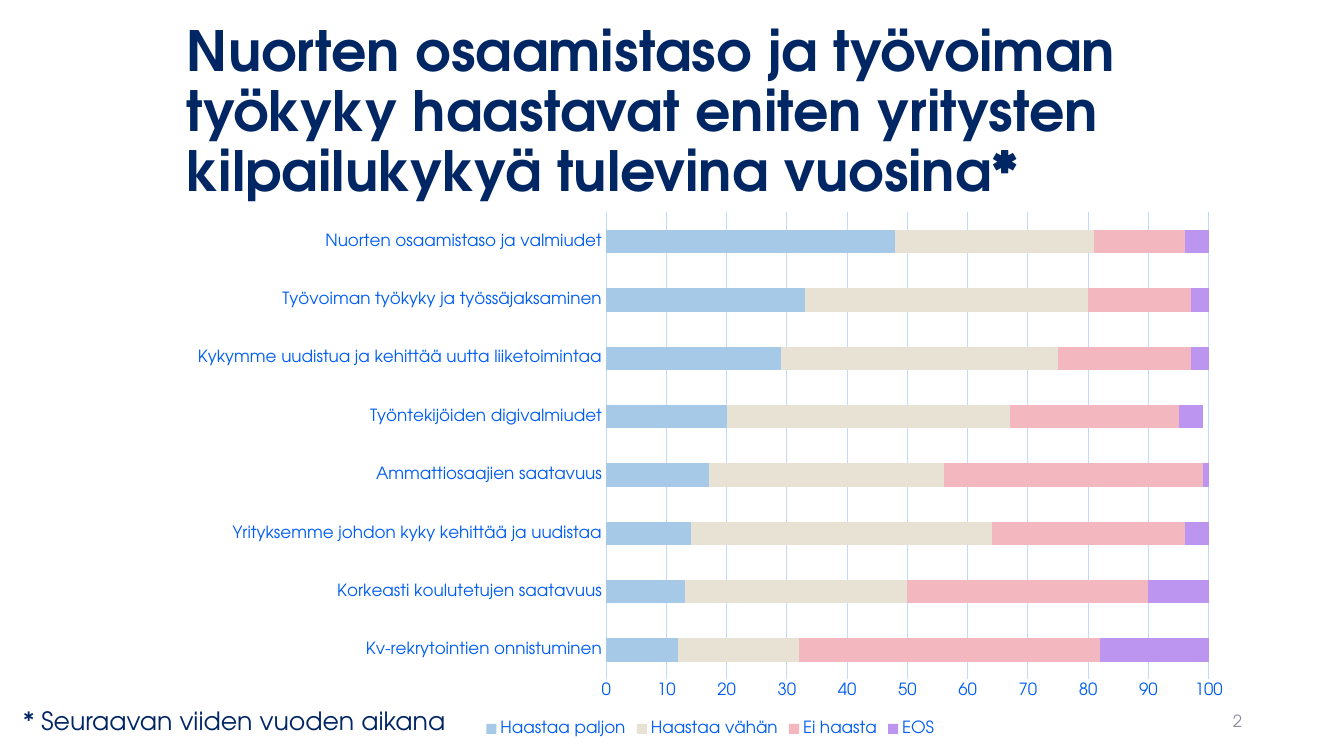
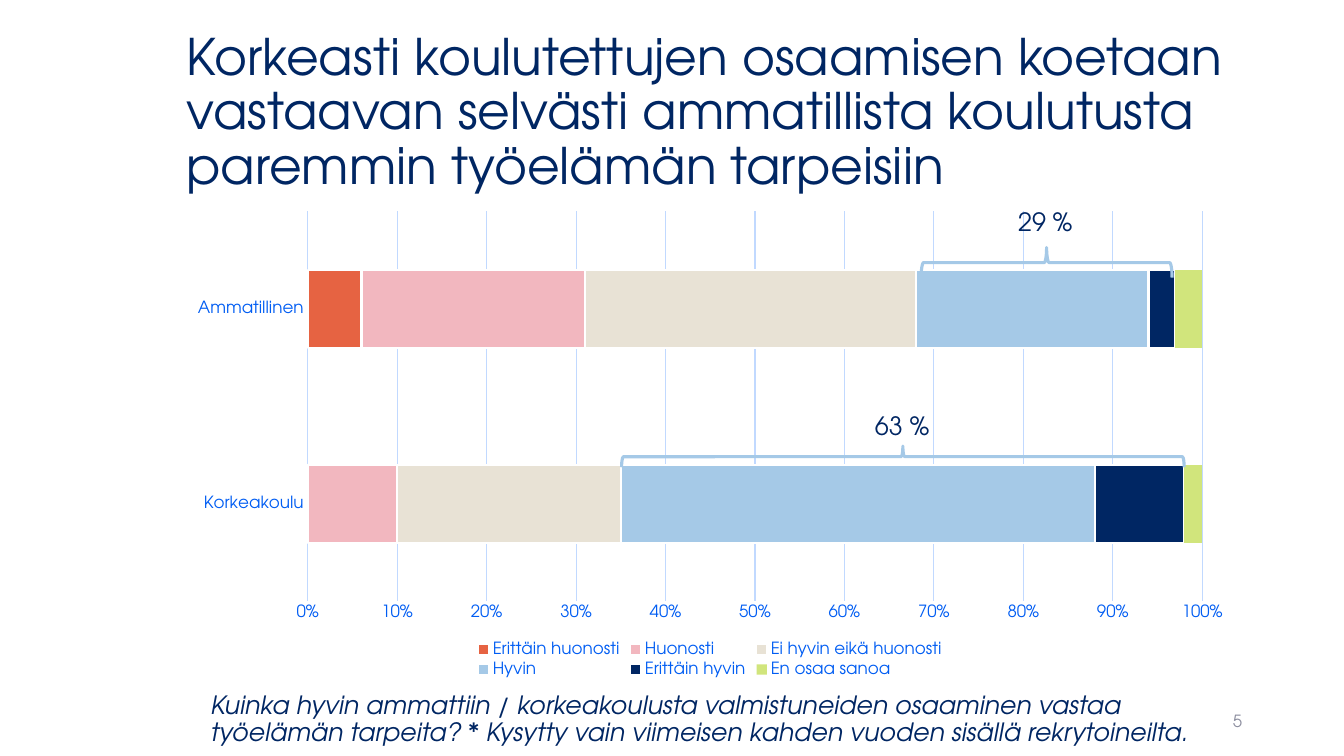
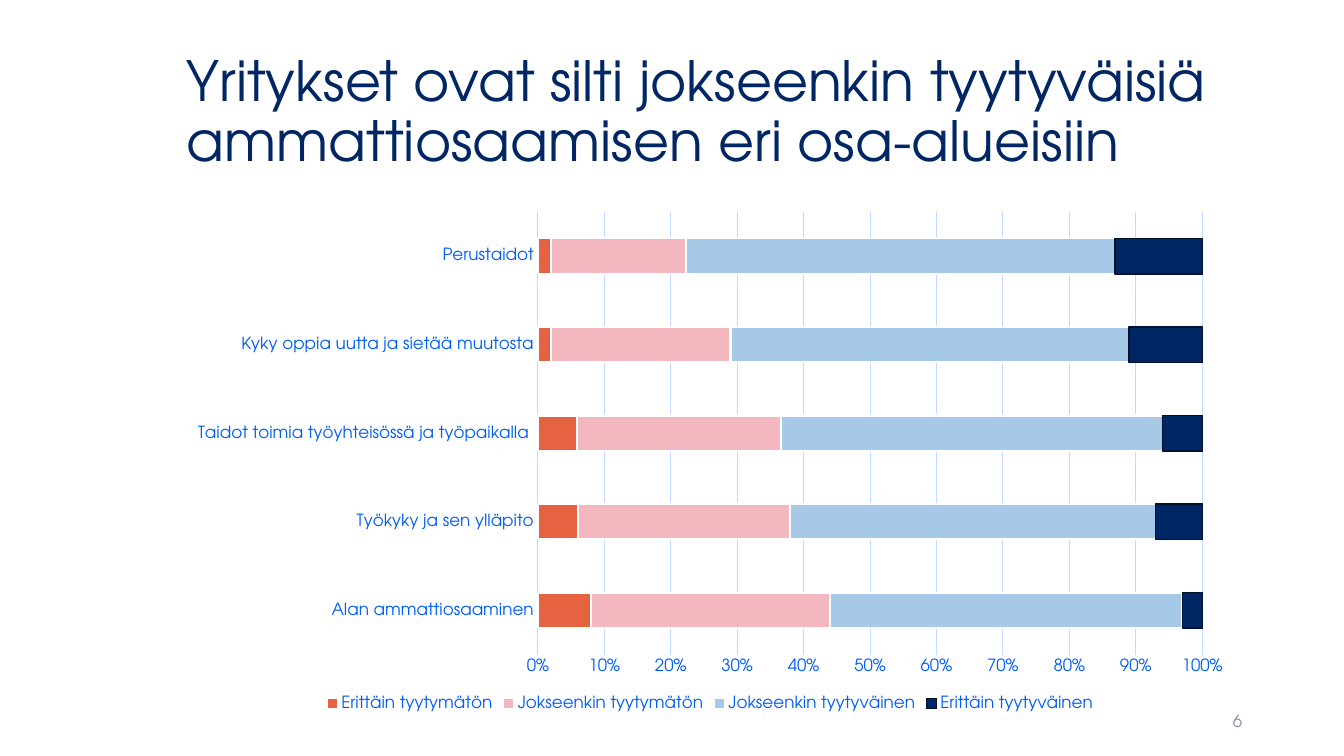
from pptx import Presentation
from pptx import util as u
from pptx.chart import data as cd
from pptx.dml.color import RGBColor
from pptx.enum import chart as ec, shapes, text

FONT = "TeX Gyre Adventor"
NAVY = RGBColor(0x00, 0x26, 0x63)
BLUE = RGBColor(0x00, 0x5D, 0xF3)
PALE = RGBColor(0xC1, 0xD9, 0xFF)
GREY = RGBColor(0x8C, 0x8E, 0x9F)
WHITE = RGBColor(0xFF, 0xFF, 0xFF)
SKY = RGBColor(0xA5, 0xC9, 0xE7)
SAND = RGBColor(0xE8, 0xE2, 0xD5)
PINK = RGBColor(0xF2, 0xB7, 0xBF)
LILAC = RGBColor(0xBB, 0x95, 0xEF)
ORANGE = RGBColor(0xE6, 0x63, 0x42)
LIME = RGBColor(0xD1, 0xE5, 0x7C)
INK = RGBColor(0x00, 0x11, 0x2B)

SLIDE = (0, 0, u.Inches(13.33), u.Inches(7.5))
EDGE = (WHITE, 1.5)
STACKED = ec.XL_CHART_TYPE.BAR_STACKED
STACKED_100 = ec.XL_CHART_TYPE.BAR_STACKED_100
MIDDLE = text.MSO_ANCHOR.MIDDLE
RIGHT = text.PP_ALIGN.RIGHT


def inside(box, x, y, w, h):
    left, top, width, height = box
    return (int(left + width * x / 100), int(top + height * y / 100),
            int(width * w / 100), int(height * h / 100))


TITLE = inside(SLIDE, 13.13, 5.33, 79.44, 19.33)
NUMBER = inside(SLIDE, 70.67, 92.67, 22.5, 5.33)
FOOTNOTE = inside(SLIDE, 1, 92.67, 33.4, 5.33)
CAPTION = inside(SLIDE, 14.93, 89.33, 75.24, 11.87)


def chart_box(height):
    return inside(SLIDE, 13.13, 26.67, 79.44, height)


def apply(obj, values):
    for name, value in values.items():
        setattr(obj, name, value)


def set_font(font, size, color=NAVY, **extra):
    apply(font, {"name": FONT, "size": u.Pt(size), **extra})
    font.color.rgb = color


def set_line(line, color, width):
    line.color.rgb = color
    line.width = u.Pt(width)


def fill_text(sp, words, size, color=NAVY, align=None, spacing=None,
              anchor=None, wrap=True, **extra):
    tf = sp.text_frame
    apply(tf, {"word_wrap": wrap, "vertical_anchor": anchor,
               "auto_size": text.MSO_AUTO_SIZE.NONE})
    p = tf.paragraphs[0]
    apply(p, {"alignment": align, "line_spacing": spacing})
    r = p.add_run()
    r.text = words
    set_font(r.font, size, color, **extra)


def add_text(s, box, words, size, **extra):
    fill_text(s.shapes.add_textbox(*box), words, size, **extra)


def add_page(prs, title, number, size=39.6, bold=False):
    s = prs.slides.add_slide(prs.slide_layouts[5])
    sp = s.shapes.title
    apply(sp, dict(zip(("left", "top", "width", "height"), TITLE)))
    fill_text(sp, title, size, align=text.PP_ALIGN.LEFT, spacing=0.9,
              anchor=MIDDLE, bold=bold)
    add_text(s, NUMBER, number, 12, color=GREY, align=RIGHT, anchor=MIDDLE)
    return s


def add_bars(s, box, kind, cats, series, axis_format, unit, top=None):
    data = cd.CategoryChartData()
    data.categories = cats
    for name, values, _, _ in series:
        data.add_series(name, values)
    chart = s.shapes.add_chart(kind, *box, data).chart
    apply(chart, {"has_title": False, "has_legend": True})
    set_font(chart.font, 10)
    apply(chart.legend, {"position": ec.XL_LEGEND_POSITION.BOTTOM,
                         "include_in_layout": False})
    set_font(chart.legend.font, 12, BLUE)

    cat, val = chart.category_axis, chart.value_axis
    for axis in (cat, val):
        apply(axis, {"major_tick_mark": ec.XL_TICK_MARK.NONE,
                     "minor_tick_mark": ec.XL_TICK_MARK.NONE})
        set_font(axis.tick_labels.font, 12, BLUE)
    set_line(cat.format.line, PALE, 0.75)
    val.format.line.fill.background()
    apply(val, {"has_major_gridlines": True, "minimum_scale": 0,
                "maximum_scale": top, "major_unit": unit})
    set_line(val.major_gridlines.format.line, PALE, 0.75)
    apply(val.tick_labels, {"number_format": axis_format,
                            "number_format_is_linked": False})

    plot = chart.plots[0]
    apply(plot, {"gap_width": 150, "overlap": 100, "vary_by_categories": False})
    for bar, (_, _, color, edge) in zip(plot.series, series):
        bar.format.fill.solid()
        bar.format.fill.fore_color.rgb = color
        if edge:
            set_line(bar.format.line, *edge)


def add_brace(s, box):
    left, top, width, height = box
    sp = s.shapes.add_shape(shapes.MSO_SHAPE.LEFT_BRACE,
                            left + (width - height) // 2,
                            top + (height - width) // 2, height, width)
    sp.rotation = 90
    sp.shadow.inherit = False
    sp.fill.background()
    set_line(sp.line, SKY, 2.25)


def challenges(prs):
    s = add_page(prs, "Nuorten osaamistaso ja työvoiman työkyky haastavat eniten "
                 "yritysten kilpailukykyä tulevina vuosina*", "2", bold=True)
    cats = ["Kv-rekrytointien onnistuminen",
            "Korkeasti koulutetujen saatavuus",
            "Yrityksemme johdon kyky kehittää ja uudistaa",
            "Ammattiosaajien saatavuus",
            "Työntekijöiden digivalmiudet",
            "Kykymme uudistua ja kehittää uutta liiketoimintaa",
            "Työvoiman työkyky ja työssäjaksaminen",
            "Nuorten osaamistaso ja valmiudet"]
    series = [("Haastaa paljon", (12, 13, 14, 17, 20, 29, 33, 48), SKY, None),
              ("Haastaa vähän", (20, 37, 50, 39, 47, 46, 47, 33), SAND, None),
              ("Ei haasta", (50, 40, 32, 43, 28, 22, 17, 15), PINK, None),
              ("EOS", (19, 10, 4, 2, 4, 3, 3, 4), LILAC, None)]
    add_bars(s, chart_box(71.33), STACKED, cats, series, "General", 10, 100)
    add_text(s, FOOTNOTE, "* Seuraavan viiden vuoden aikana", 18, wrap=False)


def education(prs):
    s = add_page(prs, "Korkeasti koulutettujen osaamisen koetaan vastaavan selvästi "
                 "ammatillista koulutusta paremmin työelämän tarpeisiin", "5", size=36)
    series = [("Erittäin huonosti", (0, 6), ORANGE, EDGE),
              ("Huonosti", (10, 25), PINK, EDGE),
              ("Ei hyvin eikä huonosti", (25, 37), SAND, EDGE),
              ("Hyvin", (53, 26), SKY, EDGE),
              ("Erittäin hyvin", (10, 3), NAVY, EDGE),
              ("En osaa sanoa", (2, 3), LIME, None)]
    box = chart_box(63.47)
    add_bars(s, box, STACKED_100, ["Korkeakoulu", "Ammatillinen"], series, "0%", 0.1)
    sums = [("63 %", (64.49, 42.44), (41.69, 50.95, 52.69, 4.41)),
            ("29 %", (77.9, 0), (69.74, 9.56, 23.51, 6.3))]
    for words, place, span in sums:
        add_brace(s, inside(box, *span))
        add_text(s, inside(box, *place, 7.08, 8.4), words, 18, wrap=False)
    add_text(s, CAPTION, "Kuinka hyvin ammattiin / korkeakoulusta valmistuneiden "
             "osaaminen vastaa työelämän tarpeita? * Kysytty vain viimeisen kahden "
             "vuoden sisällä rekrytoineilta.", 18, spacing=0.9, anchor=MIDDLE,
             italic=True)


def satisfaction(prs):
    s = add_page(prs, "Yritykset ovat silti jokseenkin tyytyväisiä "
                 "ammattiosaamisen eri osa-alueisiin", "6")
    cats = ["Alan ammattiosaaminen", "Työkyky ja sen ylläpito",
            "Taidot toimia työyhteisössä ja työpaikalla ",
            "Kyky oppia uutta ja sietää muutosta", "Perustaidot"]
    series = [("Erittäin tyytymätön", (8, 6, 6, 2, 2), ORANGE, EDGE),
              ("Jokseenkin tyytymätön", (36, 32, 31, 27, 20), PINK, EDGE),
              ("Jokseenkin tyytyväinen", (53, 55, 58, 60, 64), SKY, EDGE),
              ("Erittäin tyytyväinen", (3, 7, 6, 11, 13), NAVY, (INK, 1))]
    add_bars(s, chart_box(68), STACKED_100, cats, series, "0%", 0.1)


def main():
    prs = Presentation()
    apply(prs, {"slide_width": SLIDE[2], "slide_height": SLIDE[3]})
    for build in (challenges, education, satisfaction):
        build(prs)
    prs.save("out.pptx")


if __name__ == "__main__":
    main()
